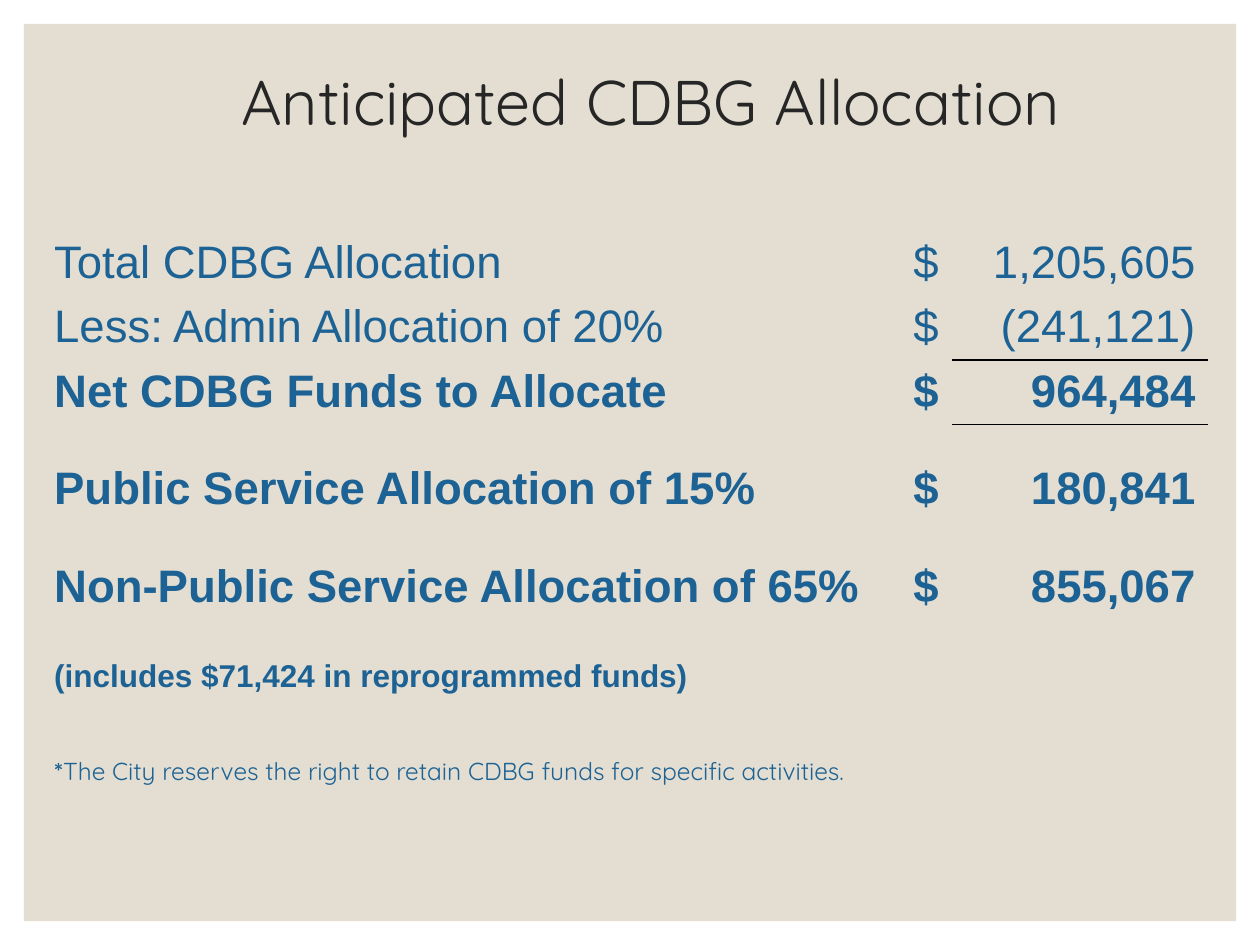
from dataclasses import dataclass

from lxml.etree import SubElement
from pptx import Presentation
from pptx.dml.color import RGBColor as Color
from pptx.enum.shapes import MSO_SHAPE as Shape
from pptx.enum.text import MSO_ANCHOR as Anchor, PP_ALIGN as Align
from pptx.oxml import parse_xml
from pptx.oxml.ns import nsdecls, qn
from pptx.util import Inches, Pt


@dataclass(frozen=True)
class Theme:
    panel: Color = Color.from_string("E3DED1")
    title: Color = Color.from_string("262626")
    text: Color = Color.from_string("1D6294")
    rule: str = "000000"
    title_font: str = "Quicksand"
    body_font: str = "Arial"
    title_size: int = 36
    body_size: int = 26
    detail_size: int = 18
    note_size: int = 14
    spacer_size: int = 8


def style_span(span, size, color, font, bold=False):
    span.font.size = Pt(size)
    span.font.color.rgb = color
    span.font.name = font
    span.font.bold = bold


def add_rule(cell, side):
    """Draw a thin line on one side of a cell: T for top, B for bottom."""
    line = parse_xml(
        f'<a:ln{side} {nsdecls("a")} w="{Pt(1)}"><a:solidFill>'
        f'<a:srgbClr val="{theme.rule}"/></a:solidFill></a:ln{side}>')
    cell._tc.get_or_add_tcPr().insert(0, line)


theme = Theme()
deck = Presentation()
deck.slide_width, deck.slide_height = Inches(10), Inches(7.5)
page = deck.slides.add_slide(deck.slide_layouts[6])

# Panel with an even margin on all sides
margin = Inches(0.19)
panel = page.shapes.add_shape(
    Shape.RECTANGLE, margin, margin,
    deck.slide_width - 2 * margin, deck.slide_height - 2 * margin)
panel.shadow.inherit = False
panel.fill.solid()
panel.fill.fore_color.rgb = theme.panel
panel.line.fill.background()

# Title
title_box = page.shapes.add_textbox(Inches(0.83), Inches(0.5), Inches(8.67), Inches(0.67))
frame = title_box.text_frame
frame.word_wrap = True
frame.vertical_anchor = Anchor.MIDDLE
frame.text = "Anticipated CDBG Allocation"
para = frame.paragraphs[0]
para.alignment = Align.CENTER
para.line_spacing = 0.9
style_span(para.runs[0], theme.title_size, theme.title, theme.title_font)

# Allocation table: label, currency sign, amount, bold
entries = {
    0: ("Total CDBG Allocation", "$", "1,205,605", False),
    1: ("Less: Admin Allocation of 20%", "$", "(241,121)", False),
    2: ("Net CDBG Funds to Allocate", "$", "964,484", True),
    4: ("Public Service Allocation of 15%", "$", "180,841", True),
    6: ("Non-Public Service Allocation of 65%", "$", "855,067", True),
}
spacer_rows = (3, 5)
detail_row, note_row = 6, 7
columns = [6.82, 0.41, 2.03]
line_row, gap_row = 0.5, 0.26
rows = [line_row] * 3 + [gap_row, line_row, gap_row, 1.15, 1.21]

table_frame = page.shapes.add_table(
    len(rows), len(columns), Inches(0.33), Inches(1.83),
    Inches(sum(columns)), Inches(sum(rows)))
table = table_frame.table
table.first_row = table.horz_banding = False
# "No Style, No Grid"
table._tbl.tblPr.find(qn("a:tableStyleId")).text = "{2D5ABB26-0587-4C30-8999-92F81FD0307C}"
for column, width in zip(table.columns, columns):
    column.width = Inches(width)
for row, height in zip(table.rows, rows):
    row.height = Inches(height)
for cell in table.iter_cells():
    cell.fill.background()
    cell.margin_top, cell.margin_bottom = Inches(0.05), Inches(0.03)

for row, (*values, bold) in entries.items():
    for column, value in enumerate(values):
        cell = table.cell(row, column)
        cell.text = value
        para = cell.text_frame.paragraphs[0]
        para.alignment = Align.RIGHT if column == 2 else Align.LEFT
        style_span(para.runs[0], theme.body_size, theme.text, theme.body_font, bold)

for row in spacer_rows:
    for cell in table.rows[row].cells:
        mark = SubElement(cell.text_frame.paragraphs[0]._p, qn("a:endParaRPr"))
        mark.set("sz", str(theme.spacer_size * 100))

add_rule(table.cell(1, 2), "B")
add_rule(table.cell(2, 2), "T")

# Remark under the last amount
para = table.cell(detail_row, 0).text_frame.add_paragraph()
para.text = "(includes $71,424 in reprogrammed funds)"
para.space_before = Pt(27)
style_span(para.runs[0], theme.detail_size, theme.text, theme.body_font, True)

# Footnote across all columns
note = table.cell(note_row, 0)
note.merge(table.cell(note_row, len(columns) - 1))
note.margin_top = Inches(0.41)
para = note.text_frame.paragraphs[0]
for words, bold in (
    ("*", True),
    ("The City reserves the right to retain CDBG funds for specific activities.", False),
):
    span = para.add_run()
    span.text = words
    style_span(span, theme.note_size, theme.text, theme.title_font, bold)

deck.save("out.pptx")
